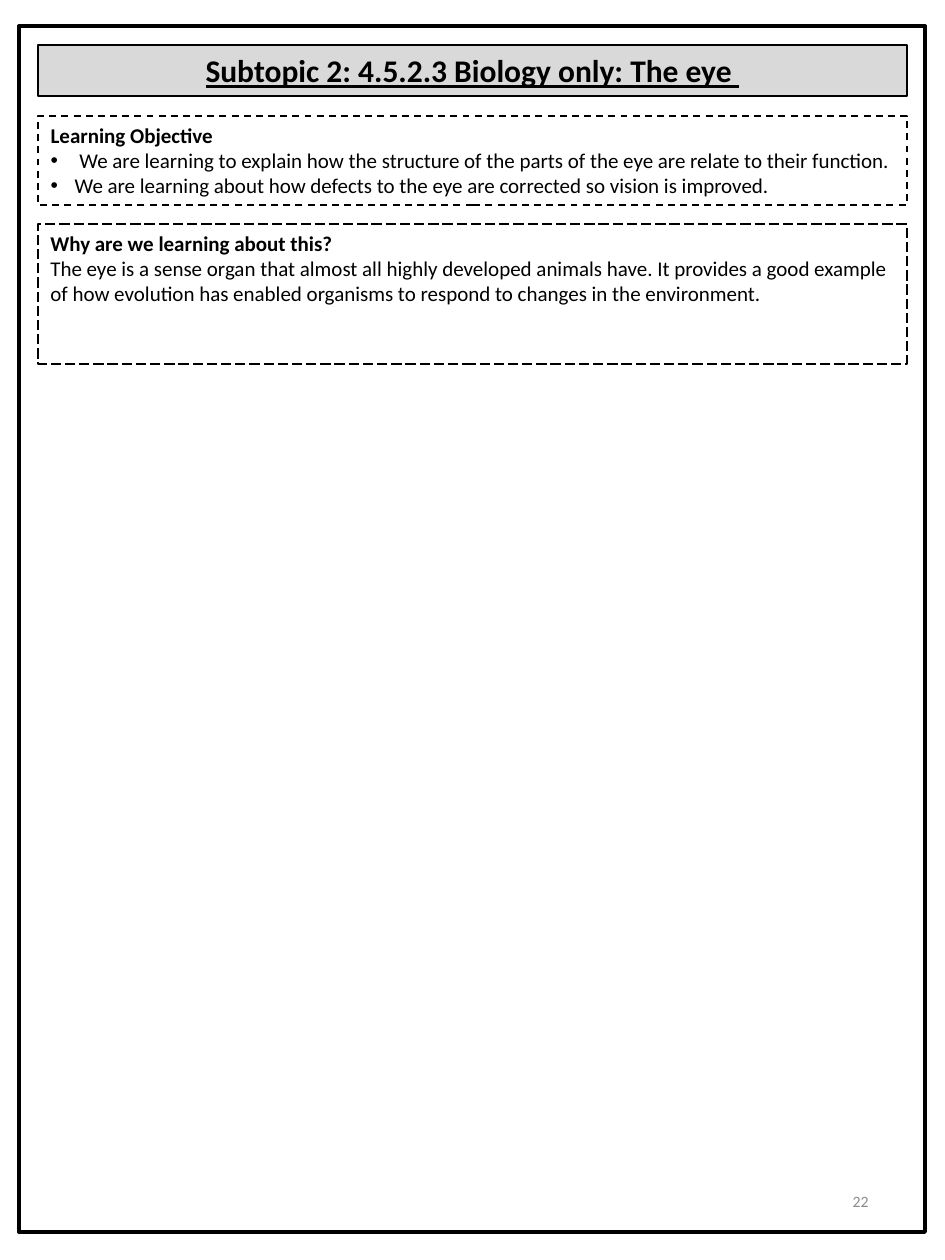
"""Build a worksheet page about the eye with its objectives and rationale."""
from dataclasses import dataclass
from typing import Optional

from lxml import etree
from pptx import Presentation
from pptx.dml.color import RGBColor
from pptx.enum.dml import MSO_LINE
from pptx.enum.shapes import MSO_SHAPE
from pptx.enum.text import MSO_ANCHOR, MSO_AUTO_SIZE, PP_ALIGN
from pptx.oxml.ns import qn
from pptx.util import Emu, Pt

RECTANGLE = MSO_SHAPE.RECTANGLE
DASH, LONG_DASH = MSO_LINE.DASH, MSO_LINE.LONG_DASH
TOP, MIDDLE = MSO_ANCHOR.TOP, MSO_ANCHOR.MIDDLE
LEFT, CENTER, RIGHT = PP_ALIGN.LEFT, PP_ALIGN.CENTER, PP_ALIGN.RIGHT
FIXED_SIZE = MSO_AUTO_SIZE.NONE

PIXELS_PER_INCH = 126
BULLET_INDENT = 24
FONT = "Calibri"
COLORS = {"ink": "000000", "band": "D9D9D9", "number": "8C8C8C"}


@dataclass(frozen=True)
class Span:
    text: str
    bold: bool = False
    underline: bool = False


@dataclass(frozen=True)
class Para:
    spans: tuple[Span, ...]
    bullet: bool = False


@dataclass(frozen=True)
class Panel:
    left: int
    top: int
    width: int
    height: int
    paras: tuple[Para, ...] = ()
    size: int = 12
    align: PP_ALIGN = LEFT
    anchor: MSO_ANCHOR = TOP
    color: str = "ink"
    fill: Optional[str] = None
    line_width: Optional[float] = None
    dash: Optional[MSO_LINE] = None


FRAME = Panel(19, 26, 906, 1206, line_width=2.25)
TITLE = Panel(
    38, 45, 869, 51,
    (Para((Span("Subtopic 2: 4.5.2.3 Biology only: The eye ", True, True),)),),
    size=18, align=CENTER, fill="band", line_width=0.75,
)
OBJECTIVE = Panel(
    38, 116, 869, 89,
    (
        Para((Span("Learning Objective", True),)),
        Para((
            Span(" ", True),
            Span("We are learning to explain how the structure of the parts of the eye "
                 "are relate to their function."),
        ), bullet=True),
        Para((Span("We are learning about how defects to the eye are corrected "
                   "so vision is improved."),), bullet=True),
    ),
    line_width=1, dash=DASH,
)
REASON = Panel(
    38, 224, 869, 140,
    (
        Para((Span("Why are we learning about this?", True),)),
        Para((Span("The eye is a sense organ that almost all highly developed animals have. "
                   "It provides a good example of how evolution has enabled organisms "
                   "to respond to changes in the environment."),)),
    ),
    line_width=0.75, dash=LONG_DASH,
)
PAGE_NUMBER = Panel(
    668, 1168, 213, 67, (Para((Span("22"),)),),
    size=9, align=RIGHT, anchor=MIDDLE, color="number",
)


def px(value: int) -> Emu:
    """Turn whole pixels into EMU."""
    return Emu(round(value * 914400 / PIXELS_PER_INCH))


def rgb(name: str) -> RGBColor:
    """Look up a named colour."""
    return RGBColor.from_string(COLORS[name])


def set_bullet(paragraph, bullet: bool) -> None:
    """Give a paragraph a hanging bullet, or clear its indent and bullet."""
    properties = paragraph._p.get_or_add_pPr()
    indent = px(BULLET_INDENT) if bullet else 0
    properties.set("marL", str(int(indent)))
    properties.set("indent", str(-int(indent)))
    if bullet:
        etree.SubElement(properties, qn("a:buFont")).set("typeface", "Arial")
        etree.SubElement(properties, qn("a:buChar")).set("char", "•")
    else:
        etree.SubElement(properties, qn("a:buNone"))


def write_paras(box, panel: Panel) -> None:
    """Write the panel's paragraphs run by run."""
    frame = box.text_frame
    frame.word_wrap = True
    frame.auto_size = FIXED_SIZE
    frame.vertical_anchor = panel.anchor
    for index, para in enumerate(panel.paras):
        paragraph = frame.add_paragraph() if index else frame.paragraphs[0]
        paragraph.alignment = panel.align
        paragraph.space_before = Pt(0)
        set_bullet(paragraph, para.bullet)
        for span in para.spans:
            run = paragraph.add_run()
            run.text = span.text
            run.font.name = FONT
            run.font.size = Pt(panel.size)
            run.font.bold = span.bold
            run.font.underline = span.underline
            run.font.color.rgb = rgb(panel.color)


def format_panel(box, panel: Panel) -> None:
    """Place a box and apply its fill, outline and text."""
    box.left, box.top = px(panel.left), px(panel.top)
    box.width, box.height = px(panel.width), px(panel.height)
    if panel.fill:
        box.fill.solid()
        box.fill.fore_color.rgb = rgb(panel.fill)
    else:
        box.fill.background()
    if panel.line_width:
        box.line.color.rgb = rgb("ink")
        box.line.width = Pt(panel.line_width)
    if panel.dash:
        box.line.dash_style = panel.dash
    if panel.paras:
        write_paras(box, panel)


def add_panel(page, panel: Panel) -> None:
    """Add a rectangle for a panel."""
    box = page.shapes.add_shape(RECTANGLE, 0, 0, px(panel.width), px(panel.height))
    box.shadow.inherit = False
    format_panel(box, panel)


def main() -> None:
    """Build and save the deck."""
    deck = Presentation()
    deck.slide_width, deck.slide_height = px(945), px(1260)
    page = deck.slides.add_slide(deck.slide_layouts[1])
    format_panel(page.shapes.title, TITLE)
    format_panel(page.placeholders[1], OBJECTIVE)
    for panel in (FRAME, REASON):
        add_panel(page, panel)
    format_panel(page.shapes.add_textbox(0, 0, 0, 0), PAGE_NUMBER)
    deck.save("out.pptx")


if __name__ == "__main__":
    main()
